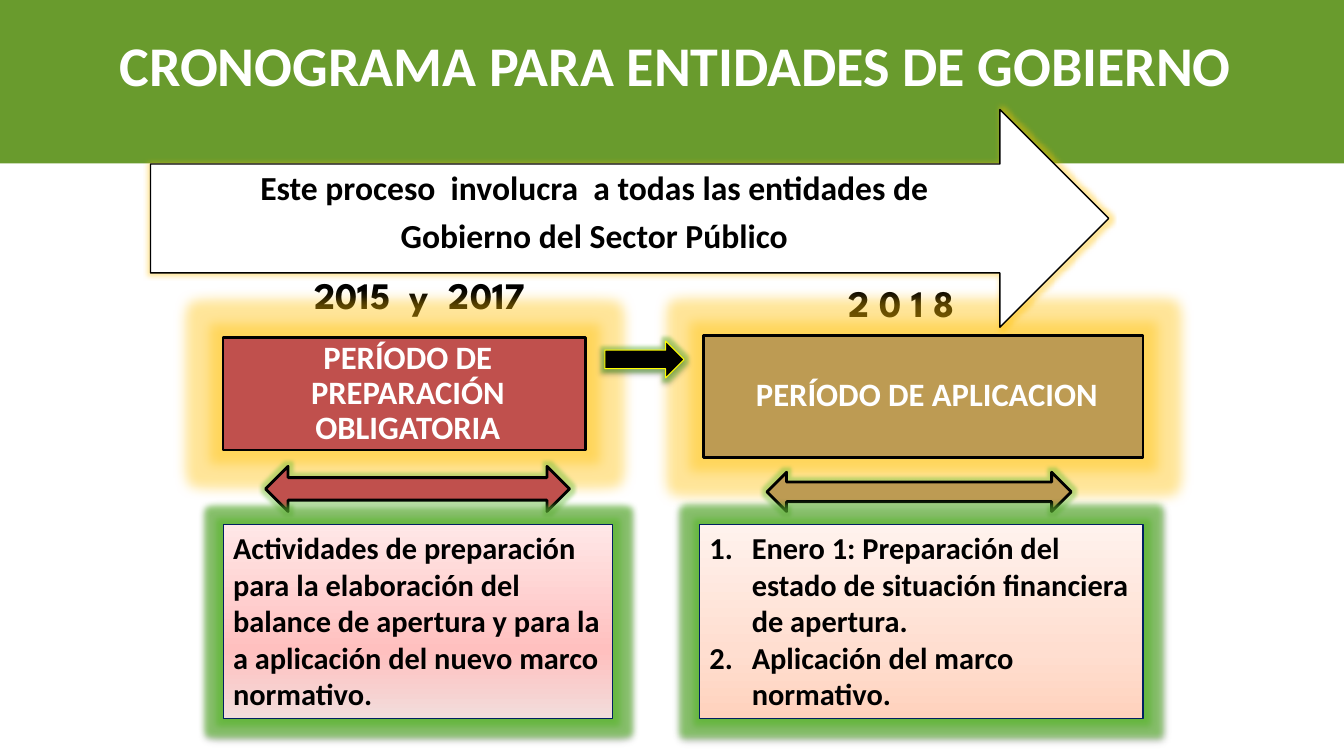
import pptx
import pptx.util
import pptx.dml.color
import pptx.enum.shapes
import pptx.enum.text
import pptx.oxml
import pptx.oxml.ns
from lxml import etree

Pt, Inches = pptx.util.Pt, pptx.util.Inches
SHAPE = pptx.enum.shapes.MSO_SHAPE
ALIGN = pptx.enum.text.PP_ALIGN
ANCHOR = pptx.enum.text.MSO_ANCHOR
qn = pptx.oxml.ns.qn

SLIDE = (0, 0, Inches(13.333), Inches(7.5))
GREEN, RED, GOLD = "699B2D", "C0504D", "BD9B53"
BLACK, WHITE, NAVY, YELLOW = "000000", "FFFFFF", "002060", "FFFF00"
GOLD_GLOW, GREEN_GLOW = "FFC000", "5DBB2F"


def rgb(value):
    return pptx.dml.color.RGBColor.from_string(value)


def inside(box, x, y, w, h):
    """Box whose place and size are percentages of another box."""
    left, top, width, height = box
    return (int(left + width * x / 100), int(top + height * y / 100),
            int(width * w / 100), int(height * h / 100))


def colour_node(parent, value, alpha=100):
    node = etree.SubElement(parent, qn("a:srgbClr"), val=value)
    if alpha < 100:
        etree.SubElement(node, qn("a:alpha"), val=str(alpha * 1000))


def add_effects(sp, glow, radius, alpha, shadow):
    effects = sp._element.spPr.find(qn("a:effectLst"))
    node = etree.SubElement(effects, qn("a:glow"), rad=str(Pt(radius)))
    colour_node(node, glow, alpha)
    if shadow:
        node = etree.SubElement(effects, qn("a:outerShdw"), blurRad=str(Pt(3.1)),
                                dist=str(Pt(1.6)), dir="5400000", rotWithShape="0")
        colour_node(node, BLACK, 38)


def add_shape(s, kind, box, fill, line=None, width=1, glow=None, radius=5,
              alpha=40, shadow=False):
    sp = s.shapes.add_shape(kind, *box)
    sp.shadow.inherit = False
    if isinstance(fill, str):
        sp.fill.solid()
        sp.fill.fore_color.rgb = rgb(fill)
    else:
        # Three-stop gradient running upwards
        sp.fill.gradient()
        sp.fill.gradient_angle = 90
        stops = sp._element.spPr.find(".//" + qn("a:gsLst"))
        for stop in list(stops):
            stops.remove(stop)
        for pos, value in zip((0, 35, 100), fill):
            stop = etree.SubElement(stops, qn("a:gs"), pos=str(pos * 1000))
            colour_node(stop, value)
    if line:
        sp.line.color.rgb = rgb(line)
        sp.line.width = Pt(width)
    else:
        sp.line.fill.background()
    if glow:
        add_effects(sp, glow, radius, alpha, shadow)
    return sp


def write(sp, lines, size, color=BLACK, font="Calibri", align=ALIGN.CENTER,
          anchor=ANCHOR.MIDDLE, insets=(0.1, 0.05, 0.1, 0.05), spacing=1,
          gap=0, numbered=False):
    tf = sp.text_frame
    tf.word_wrap = True
    tf.vertical_anchor = anchor
    tf.margin_left, tf.margin_top, tf.margin_right, tf.margin_bottom = map(Inches, insets)
    for i, line in enumerate(lines):
        p = tf.add_paragraph() if i else tf.paragraphs[0]
        p.alignment = align
        p.line_spacing = spacing
        if i < len(lines) - 1:
            p.space_after = Pt(gap)
        if numbered:
            pPr = p._p.get_or_add_pPr()
            pPr.set("marL", str(Inches(0.42)))
            pPr.set("indent", str(-Inches(0.42)))
            etree.SubElement(pPr, qn("a:buFont"), typeface="+mj-lt")
            etree.SubElement(pPr, qn("a:buAutoNum"), type="arabicPeriod")
        r = p.add_run()
        r.text = line
        r.font.name, r.font.size, r.font.bold = font, Pt(size), True
        r.font.color.rgb = rgb(color)


def header(s, box):
    # Green band behind the title
    band = add_shape(s, SHAPE.RECTANGLE, inside(box, 0, 0, 100, 100), GREEN)
    s.shapes._spTree.insert(2, band._element)
    title = s.shapes.title
    title.left, title.top, title.width, title.height = inside(box, 7.6, 15.4, 85.3, 47.5)
    write(title, ["CRONOGRAMA PARA ENTIDADES DE GOBIERNO"], 40, WHITE)


def period(s, box, year, name, color, tints, lines, places, numbered=False):
    year_at, name_at, span_at = (inside(box, *place) for place in places)
    # Years
    label = s.shapes.add_textbox(*year_at)
    write(label, [year], 26.7, font="League Spartan", anchor=ANCHOR.TOP)
    # Name of the period
    sp = add_shape(s, SHAPE.RECTANGLE, name_at, color, BLACK, 2, GOLD_GLOW, 18)
    write(sp, [name], 23.3, WHITE, insets=(0.51, 0.04, 0.44, 0.04), spacing=0.9)
    # Span of the period
    add_shape(s, SHAPE.LEFT_RIGHT_ARROW, span_at, color, BLACK, 2, GREEN_GLOW)
    # Activities
    sp = add_shape(s, SHAPE.RECTANGLE, inside(box, 0, 57.1, 100, 42.9), tints, NAVY,
                   0.75, GREEN_GLOW, 9, 60, shadow=True)
    write(sp, lines, 21.7, align=ALIGN.LEFT, anchor=ANCHOR.TOP, numbered=numbered)


def process_arrow(s, box):
    sp = add_shape(s, SHAPE.RIGHT_ARROW, box, WHITE, BLACK, 1, GOLD_GLOW)
    write(sp, ["Este proceso  involucra  a todas las entidades de",
               "Gobierno del Sector Público"], 24,
          insets=(0, 0, 0.16, 0.1), spacing=0.9, gap=8.4)


def main():
    prs = pptx.Presentation()
    prs.slide_width, prs.slide_height = SLIDE[2:]
    s = prs.slides.add_slide(prs.slide_layouts[5])

    header(s, inside(SLIDE, 0, 0, 100, 21.6))
    period(s, inside(SLIDE, 16.6, 35.3, 29, 59.7), "2015  y  2017",
           "PERÍODO DE PREPARACIÓN OBLIGATORIA", RED, ("F2DCDB", "FFC0BF", "FFE7E7"),
           ["Actividades de preparación para la elaboración del balance de apertura "
            "y para la a aplicación del nuevo marco normativo."],
           [(18, 0, 65, 12.3), (0, 15.6, 93, 25), (10.9, 44.2, 78, 10)])
    period(s, inside(SLIDE, 52.05, 35.3, 33, 59.7), "2 0 1 8",
           "PERÍODO DE APLICACION", GOLD, ("FFD2BD", "FFDED0", "FFF2ED"),
           ["Enero 1: Preparación del estado de situación financiera de apertura.",
            "Aplicación del marco normativo."],
           [(28.4, 1.8, 34.3, 12.3), (0.9, 15.2, 99.1, 27), (15.2, 45.5, 68.6, 8.7)],
           numbered=True)
    # Step from preparation to application
    add_shape(s, SHAPE.RIGHT_ARROW, inside(SLIDE, 45, 45.1, 5.9, 4.9), BLACK, YELLOW,
              0.75, GREEN_GLOW, 5, shadow=True)
    process_arrow(s, inside(SLIDE, 11.2, 14.5, 71.3, 28.8))
    prs.save("out.pptx")


if __name__ == "__main__":
    main()
